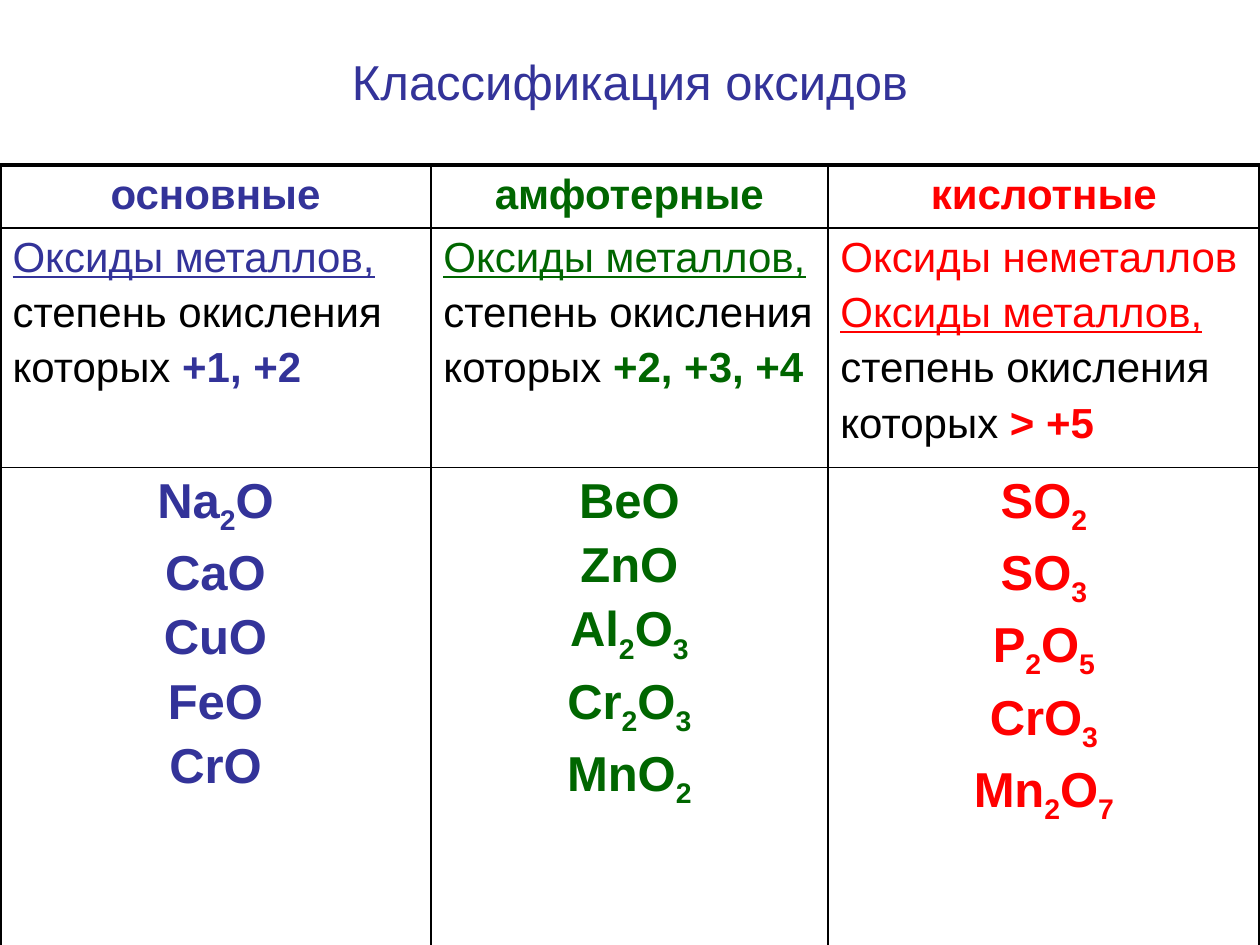
import itertools

import pptx
import pptx.dml.color
import pptx.enum.text
import pptx.oxml
import pptx.oxml.ns
import pptx.util

Inches = pptx.util.Inches
ALIGN = pptx.enum.text.PP_ALIGN
ANCHOR = pptx.enum.text.MSO_ANCHOR
COLORS = {"basic": "333399", "amphoteric": "006600", "acidic": "FF0000",
          "text": "000000", "paper": "FFFFFF", "border": "000000"}

# Each kind of oxide: heading, colour, lines of the definition, oxidation states, formulas
# Definition lines are (text, coloured, underlined)
METALS = ("Оксиды металлов,", True, True)
NONMETALS = ("Оксиды неметаллов", True, False)
STATE = ("степень окисления", False, False)
KINDS = [
    ("основные", "basic", [METALS, STATE], "+1, +2",
     ["Na2O", "CaO", "CuO", "FeO", "CrO"]),
    ("амфотерные", "amphoteric", [METALS, STATE], "+2, +3, +4",
     ["BeO", "ZnO", "Al2O3", "Cr2O3", "MnO2"]),
    ("кислотные", "acidic", [NONMETALS, METALS, STATE], "> +5",
     ["SO2", "SO3", "P2O5", "CrO3", "Mn2O7"]),
]
COLUMN_WIDTHS = [3.42, 3.15, 3.43]
ROW_HEIGHTS = [0.48, 1.79, 3.9]


class SlideWriter:
    """Holds the text style and the current slide."""

    font = "Arial"
    thin, thick = 1, 2.25

    def __init__(self, page):
        self.page = page

    def add_span(self, para, text, color, size, subscript=False, **format_values):
        span = para.add_run()
        span.text = text
        values = {"name": self.font, "size": pptx.util.Pt(size), **format_values}
        for name, value in values.items():
            setattr(span.font, name, value)
        span.font.color.rgb = pptx.dml.color.RGBColor.from_string(COLORS[color])
        if subscript:
            span._r.get_or_add_rPr().set("baseline", "-25000")

    def add_title(self, text, left, top, width, height):
        box = self.page.shapes.add_textbox(
            Inches(left), Inches(top), Inches(width), Inches(height))
        frame = box.text_frame
        for name, value in {"word_wrap": True, "vertical_anchor": ANCHOR.MIDDLE}.items():
            setattr(frame, name, value)
        para = frame.paragraphs[0]
        para.alignment = ALIGN.CENTER
        self.add_span(para, text, "basic", 28)

    def add_table(self, left, top, widths, heights):
        table = self.page.shapes.add_table(
            len(heights), len(widths), Inches(left), Inches(top),
            Inches(sum(widths)), Inches(sum(heights))).table
        table.first_row = table.horz_banding = False
        for column, width in zip(table.columns, widths):
            column.width = Inches(width)
        for row, height in zip(table.rows, heights):
            row.height = Inches(height)
        last_row, last_column = len(heights) - 1, len(widths) - 1
        for r, c in itertools.product(range(len(heights)), range(len(widths))):
            cell = table.cell(r, c)
            cell.fill.solid()
            cell.fill.fore_color.rgb = pptx.dml.color.RGBColor.from_string(COLORS["paper"])
            self.add_borders(cell, {"L": c == 0, "R": c == last_column,
                                    "T": r == 0, "B": r == last_row})
        return table

    def add_borders(self, cell, outer_sides):
        properties = cell._tc.get_or_add_tcPr()
        for index, (side, outer) in enumerate(outer_sides.items()):
            width = pptx.util.Pt(self.thick if outer else self.thin)
            properties.insert(index, pptx.oxml.parse_xml(
                f'<a:ln{side} {pptx.oxml.ns.nsdecls("a")} w="{int(width)}"><a:solidFill>'
                f'<a:srgbClr val="{COLORS["border"]}"/></a:solidFill></a:ln{side}>'))

    def add_cell_lines(self, cell, lines, alignment):
        """Each line is a list of (text, format values)."""
        frame = cell.text_frame
        for index, spans in enumerate(lines):
            para = frame.add_paragraph() if index else frame.paragraphs[0]
            para.alignment = alignment
            # Space before is 20% of the line
            para._p.get_or_add_pPr().append(pptx.oxml.parse_xml(
                f'<a:spcBef {pptx.oxml.ns.nsdecls("a")}><a:spcPct val="20000"/></a:spcBef>'))
            for text, format_values in spans:
                self.add_span(para, text, **format_values)


def formula_spans(formula, color):
    """Digits of a formula become subscripts."""
    return [("".join(part), {"color": color, "size": 28, "bold": True, "subscript": is_digit})
            for is_digit, part in itertools.groupby(formula, str.isdigit)]


def definition_lines(lines, states, color):
    plain = {"color": "text", "size": 24}
    result = [[(text, {**plain, "color": color if colored else "text",
                       "underline": underlined})]
              for text, colored, underlined in lines]
    result.append([("которых ", plain), (states, {**plain, "color": color, "bold": True})])
    return result


def main():
    deck = pptx.Presentation()
    deck.slide_width, deck.slide_height = Inches(10), Inches(7.5)
    writer = SlideWriter(deck.slides.add_slide(deck.slide_layouts[6]))

    # Title
    writer.add_title("Классификация оксидов", 0.5, 0.3, 9, 0.69)

    # Classification table: one column for each kind of oxide
    table = writer.add_table(0, 1.31, COLUMN_WIDTHS, ROW_HEIGHTS)
    for column, (heading, color, lines, states, formulas) in enumerate(KINDS):
        heading_line = [(heading, {"color": color, "size": 24, "bold": True})]
        writer.add_cell_lines(table.cell(0, column), [heading_line], ALIGN.CENTER)
        writer.add_cell_lines(table.cell(1, column),
                              definition_lines(lines, states, color), ALIGN.LEFT)
        writer.add_cell_lines(table.cell(2, column),
                              [formula_spans(formula, color) for formula in formulas],
                              ALIGN.CENTER)

    deck.save("out.pptx")


if __name__ == "__main__":
    main()
